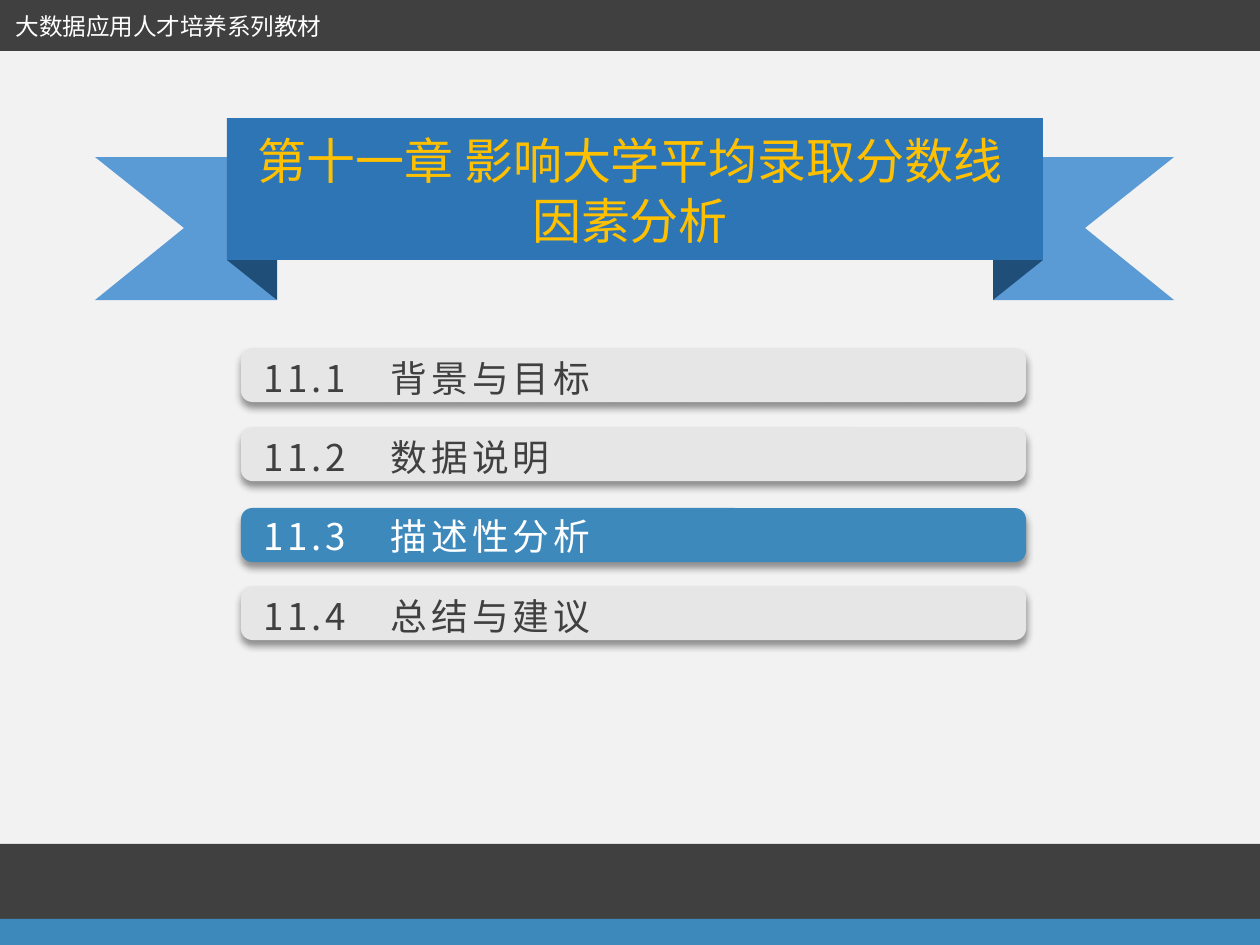
from lxml.etree import SubElement
from pptx import Presentation
from pptx.dml.color import RGBColor
from pptx.enum.shapes import MSO_SHAPE
from pptx.enum.text import MSO_ANCHOR, PP_ALIGN
from pptx.oxml.ns import qn
from pptx.util import Pt

EMU_PER_PX = 914400 / 126
FONT = "Noto Sans CJK SC"
COLORS = {
    "page": "F2F2F2",
    "dark": "404040",
    "accent": "3D89BC",
    "row": "E6E6E6",
    "ribbon": "5B9BD5",
    "fold": "1F4E79",
    "banner": "2E75B6",
    "gold": "FFC000",
    "white": "FFFFFF",
}
# Row top, text top, text, highlighted
SECTIONS = [
    (348, 349, "11.1　背景与目标", False),
    (427, 428, "11.2　数据说明", False),
    (508, 507, "11.3　描述性分析", True),
    (586, 587, "11.4　总结与建议", False),
]


def px(length):
    return round(length * EMU_PER_PX)


def color(name):
    return RGBColor.from_string(COLORS[name])


def paint(shape, fill):
    shape.shadow.inherit = False
    shape.fill.solid()
    shape.fill.fore_color.rgb = color(fill)
    shape.line.fill.background()


def add_block(shapes, kind, bounds, fill):
    block = shapes.add_shape(kind, *map(px, bounds))
    paint(block, fill)
    return block


def add_polygon(shapes, points, fill):
    builder = shapes.build_freeform(*points[0], scale=EMU_PER_PX)
    builder.add_line_segments(points[1:], close=True)
    paint(builder.convert_to_shape(), fill)


def add_text(shapes, bounds, text, size, fill, align=PP_ALIGN.LEFT, wrap=False):
    box = shapes.add_textbox(*map(px, bounds))
    frame = box.text_frame
    frame.word_wrap = wrap
    frame.vertical_anchor = MSO_ANCHOR.MIDDLE
    frame.margin_top = frame.margin_bottom = 0
    para = frame.paragraphs[0]
    para.text = text
    para.alignment = align
    para.font.size = Pt(size)
    para.font.color.rgb = color(fill)
    para.font.name = FONT
    # East Asian typeface
    properties = para._p.pPr.find(qn("a:defRPr"))
    SubElement(properties, qn("a:ea"), typeface=FONT)
    return para, properties


def add_drop_shadow(shape):
    effects = shape._element.spPr.find(qn("a:effectLst"))
    shadow = SubElement(effects, qn("a:outerShdw"), blurRad=str(Pt(4)), dist=str(Pt(3)),
                        dir="5400000", algn="t", rotWithShape="0")
    black = SubElement(shadow, qn("a:srgbClr"), val="000000")
    SubElement(black, qn("a:alpha"), val="40000")


def add_banner(page):
    shapes = page.shapes.add_group_shape().shapes
    # Ribbon tails, the right one mirrored from the left
    tail = [(95, 157), (276, 157), (276, 300), (95, 300), (184, 228)]
    add_polygon(shapes, tail, "ribbon")
    add_polygon(shapes, [(1269 - x, y) for x, y in tail], "ribbon")
    # Folds
    for bounds, turn in [((227, 260, 50, 40), 180), ((998, 255, 40, 50), 90)]:
        add_block(shapes, MSO_SHAPE.RIGHT_TRIANGLE, bounds, "fold").rotation = turn
    # Title
    add_block(shapes, MSO_SHAPE.RECTANGLE, (227, 118, 816, 142), "banner")
    para, _ = add_text(shapes, (227, 124, 806, 131), "第十一章 影响大学平均录取分数线因素分析",
                       28, "gold", PP_ALIGN.CENTER, wrap=True)
    para.line_spacing = Pt(34)


def add_section(page, top, text_top, text, active):
    shapes = page.shapes.add_group_shape().shapes
    row = add_block(shapes, MSO_SHAPE.ROUNDED_RECTANGLE, (241, top, 785, 54),
                    "accent" if active else "row")
    row.adjustments[0] = 0.21
    add_drop_shadow(row)
    _, properties = add_text(shapes, (251, text_top, 363, 57), text, 21,
                             "white" if active else "dark")
    properties.set("spc", "220")


def main():
    deck = Presentation()
    deck.slide_width, deck.slide_height = px(1260), px(945)
    page = deck.slides.add_slide(deck.slide_layouts[6])
    page.background.fill.solid()
    page.background.fill.fore_color.rgb = color("page")

    add_banner(page)
    for section in SECTIONS:
        add_section(page, *section)

    # Header and footer bands
    for bounds, fill in [((-1, -1, 1262, 52), "dark"),
                         ((0, 844, 1260, 76), "dark"),
                         ((0, 919, 1260, 26), "accent")]:
        add_block(page.shapes, MSO_SHAPE.RECTANGLE, bounds, fill)
    add_text(page.shapes, (1, 5, 335, 42), "大数据应用人才培养系列教材",
             13.5, "white", PP_ALIGN.CENTER)

    deck.save("out.pptx")


if __name__ == "__main__":
    main()
